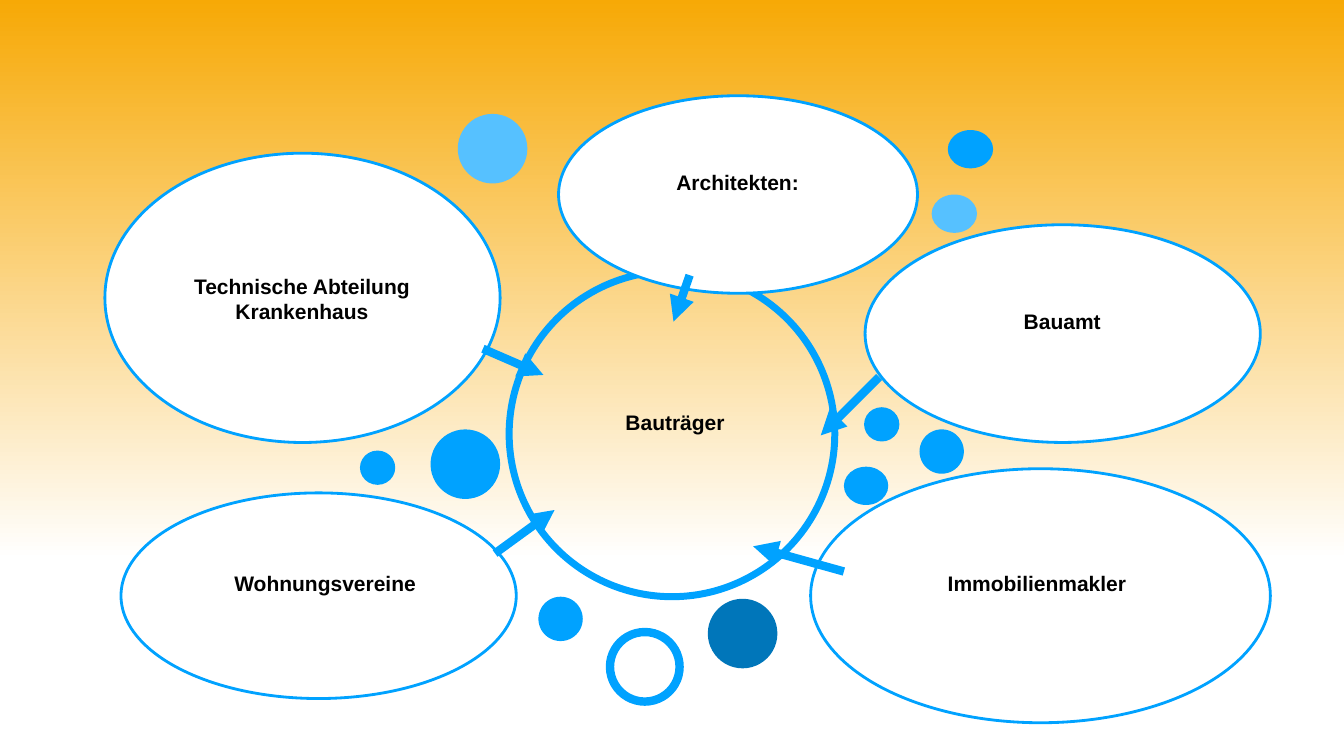
from typing import NamedTuple, Optional

from pptx import Presentation
from pptx.dml.color import RGBColor
from pptx.enum.shapes import MSO_CONNECTOR as Connector, MSO_SHAPE as Preset
from pptx.enum.text import MSO_ANCHOR as Anchor, PP_ALIGN as Align
from pptx.oxml.ns import qn
from pptx.util import Inches, Pt
from lxml.etree import SubElement

AMBER = RGBColor(0xF7, 0xA9, 0x06)
WHITE = RGBColor(0xFF, 0xFF, 0xFF)
BLACK = RGBColor(0x00, 0x00, 0x00)
BLUE = RGBColor(0x00, 0xA2, 0xFF)
DARK_BLUE = RGBColor(0x00, 0x76, 0xBA)
LIGHT_BLUE = RGBColor(0x56, 0xC1, 0xFF)

LABEL_WIDTH, LABEL_HEIGHT = 3.09, 0.56
LABEL_INSET = 0.03


class Ellipse(NamedTuple):
    left: float
    top: float
    width: float
    height: float
    fill: Optional[RGBColor] = None
    outline: float = 0


class Party(NamedTuple):
    name: str
    ellipse: Ellipse
    label_left: float
    label_top: float


class Arrow(NamedTuple):
    x1: float
    y1: float
    x2: float
    y2: float


PARTIES = [
    Party("Bauträger", Ellipse(5.05, 2.69, 3.23, 3.23, None, 5), 5.15, 4.03),
    Party("Architekten:", Ellipse(5.54, 0.95, 3.56, 1.96, WHITE, 2), 5.77, 1.65),
    Party("Bauamt", Ellipse(8.58, 2.23, 3.92, 2.16, WHITE, 2), 8.99, 3.03),
    Party("Immobilienmakler", Ellipse(8.04, 4.65, 4.56, 2.52, WHITE, 2), 8.74, 5.63),
    Party("Technische Abteilung Krankenhaus",
          Ellipse(1.04, 1.52, 3.92, 2.87, WHITE, 2), 1.45, 2.68),
    Party("Wohnungsvereine", Ellipse(1.2, 4.89, 3.92, 2.04, WHITE, 2), 1.68, 5.63),
]

ARROWS = [
    Arrow(4.91, 5.49, 5.5, 5.06),
    Arrow(8.37, 5.67, 7.47, 5.42),
    Arrow(8.72, 3.74, 8.14, 4.32),
    Arrow(6.84, 2.73, 6.68, 3.19),
    Arrow(4.79, 3.46, 5.39, 3.72),
]

BUBBLES = [
    Ellipse(4.27, 4.26, 0.69, 0.69, BLUE),
    Ellipse(7.02, 5.94, 0.69, 0.69, DARK_BLUE),
    Ellipse(4.54, 1.13, 0.69, 0.69, LIGHT_BLUE),
    Ellipse(3.57, 4.47, 0.35, 0.34, BLUE),
    Ellipse(8.57, 4.04, 0.35, 0.34, BLUE),
    Ellipse(9.12, 4.26, 0.44, 0.44, BLUE),
    Ellipse(8.37, 4.63, 0.44, 0.38, BLUE),
    Ellipse(5.34, 5.92, 0.44, 0.44, BLUE),
    Ellipse(6.05, 6.27, 0.69, 0.69, None, 6),
    Ellipse(9.24, 1.93, 0.45, 0.38, LIGHT_BLUE),
    Ellipse(9.4, 1.29, 0.45, 0.38, BLUE),
]


def paint_background(slide) -> None:
    fill = slide.background.fill
    fill.gradient()
    fill.gradient_angle = 270
    for stop, color, position in zip(fill.gradient_stops, (AMBER, WHITE), (0, 0.74)):
        stop.color.rgb = color
        stop.position = position


def draw_ellipse(slide, ellipse: Ellipse) -> None:
    oval = slide.shapes.add_shape(
        Preset.OVAL, Inches(ellipse.left), Inches(ellipse.top),
        Inches(ellipse.width), Inches(ellipse.height))
    oval.shadow.inherit = False
    if ellipse.fill is None:
        oval.fill.background()
    else:
        oval.fill.solid()
        oval.fill.fore_color.rgb = ellipse.fill
    if ellipse.outline:
        oval.line.color.rgb = BLUE
        oval.line.width = Pt(ellipse.outline)
    else:
        oval.line.fill.background()


def add_text(slide, text: str, left: float, top: float, *, size: float = 15,
             bold: bool = True, color: RGBColor = BLACK, font: str = "Arial") -> None:
    label = slide.shapes.add_textbox(
        Inches(left), Inches(top), Inches(LABEL_WIDTH), Inches(LABEL_HEIGHT))
    frame = label.text_frame
    frame.word_wrap = True
    frame.vertical_anchor = Anchor.TOP
    frame.margin_left = frame.margin_right = Inches(LABEL_INSET)
    frame.margin_top = frame.margin_bottom = Inches(LABEL_INSET)
    paragraph = frame.paragraphs[0]
    paragraph.alignment = Align.CENTER
    run = paragraph.add_run()
    run.text = text
    run.font.name = font
    run.font.size = Pt(size)
    run.font.bold = bold
    run.font.color.rgb = color


def draw_arrow(slide, arrow: Arrow) -> None:
    connector = slide.shapes.add_connector(
        Connector.STRAIGHT, *(Inches(coordinate) for coordinate in arrow))
    connector.line.color.rgb = BLUE
    connector.line.width = Pt(6)
    properties = connector.element.spPr
    SubElement(properties.find(qn("a:ln")), qn("a:tailEnd"), type="triangle")
    SubElement(properties, qn("a:effectLst"))


def main() -> None:
    presentation = Presentation()
    presentation.slide_width = Inches(13.33)
    presentation.slide_height = Inches(7.5)
    slide = presentation.slides.add_slide(presentation.slide_layouts[6])
    paint_background(slide)
    for party in PARTIES:
        draw_ellipse(slide, party.ellipse)
        add_text(slide, party.name, party.label_left, party.label_top)
    for arrow in ARROWS:
        draw_arrow(slide, arrow)
    for bubble in BUBBLES:
        draw_ellipse(slide, bubble)
    presentation.save("out.pptx")


if __name__ == "__main__":
    main()
